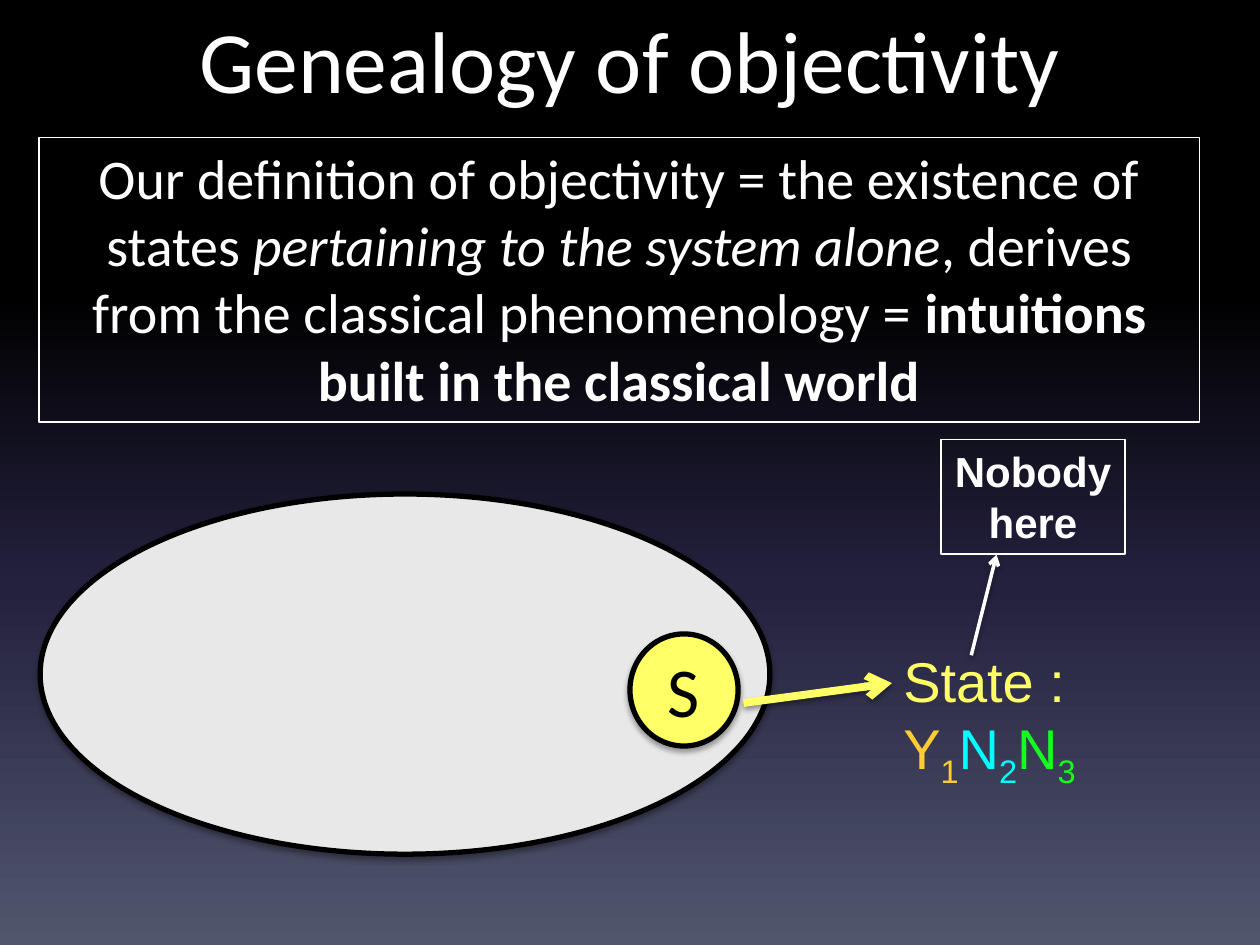
"""Build the "Genealogy of objectivity" slide."""
from lxml import etree
from pptx import Presentation
from pptx.dml.color import RGBColor
from pptx.enum.shapes import MSO_CONNECTOR, MSO_SHAPE
from pptx.enum.text import MSO_ANCHOR, PP_ALIGN
from pptx.oxml import parse_xml
from pptx.oxml.ns import nsdecls, qn
from pptx.util import Cm, Pt

CENTER, LEFT = PP_ALIGN.CENTER, PP_ALIGN.LEFT
TOP, MIDDLE = MSO_ANCHOR.TOP, MSO_ANCHOR.MIDDLE
OVAL, STRAIGHT = MSO_SHAPE.OVAL, MSO_CONNECTOR.STRAIGHT
COLORS = {
    "black": "000000", "white": "FFFFFF", "grey": "E8E8E8", "yellow": "FFFF66",
    "orange": "FFCD32", "cyan": "00FFFF", "green": "15FF1F",
    "night": "24213E", "dusk": "51566D",
}


def rgb(name):
    return RGBColor.from_string(COLORS[name])


def add_shadow(shape, opacity, distance):
    shape.element.spPr.append(parse_xml(
        f'<a:effectLst {nsdecls("a")}><a:outerShdw blurRad="{Pt(3.1)}" dist="{Pt(distance)}" '
        f'dir="5400000" rotWithShape="0"><a:srgbClr val="{COLORS["black"]}">'
        f'<a:alpha val="{opacity * 1000}"/></a:srgbClr></a:outerShdw></a:effectLst>'))


prs = Presentation()
prs.slide_width, prs.slide_height = Cm(25.4), Cm(19.05)
s = prs.slides.add_slide(prs.slide_layouts[5])

fill = s.background.fill
fill.gradient()
fill.gradient_angle = 270
stops = s.element.find(".//" + qn("a:gsLst"))
for stop in list(stops):
    stops.remove(stop)
for position, name in [(0, "black"), (31, "black"), (62, "night"), (100, "dusk")]:
    stop = etree.SubElement(stops, qn("a:gs"), pos=str(position * 1000))
    etree.SubElement(stop, qn("a:srgbClr"), val=COLORS[name])

title = s.shapes.title
title.left, title.top, title.width, title.height = Cm(1.27), Cm(0), Cm(22.86), Cm(3.18)

definition = s.shapes.add_textbox(Cm(0.79), Cm(2.77), Cm(23.39), Cm(5.74))

ovals = []
for x, y, w, h, name in [(0.81, 9.96, 14.71, 7.26, "grey"), (12.7, 12.78, 2.18, 2.26, "yellow")]:
    sp = s.shapes.add_shape(OVAL, Cm(x), Cm(y), Cm(w), Cm(h))
    sp.fill.solid()
    sp.fill.fore_color.rgb = rgb(name)
    sp.line.color.rgb = rgb("black")
    sp.line.width = Pt(3)
    add_shadow(sp, 35, 1.8)
    ovals.append(sp)
world, system = ovals

state = s.shapes.add_textbox(Cm(17.96), Cm(12.9), Cm(4.19), Cm(3))
nobody = s.shapes.add_textbox(Cm(18.97), Cm(8.86), Cm(3.71), Cm(2.31))

for box in (definition, nobody):
    box.line.color.rgb = rgb("white")
    box.line.width = Pt(0.75)

texts = [
    (title, "Calibri", 50, CENTER, TOP, True, [[("Genealogy of objectivity", "white", "")]]),
    (definition, "Calibri", 32, CENTER, TOP, True, [[
        ("Our definition of objectivity = the existence of states ", "white", ""),
        ("pertaining to the system alone", "white", "italic"),
        (", derives from the classical phenomenology = ", "white", ""),
        ("intuitions built in the classical world", "white", "bold")]]),
    (system, "Calibri", 40, CENTER, MIDDLE, True, [[("S", "black", "")]]),
    (state, "Arial", 32, LEFT, TOP, False, [
        [("State :", "yellow", "")],
        [("Y", "orange", ""), ("1", "orange", "sub"), ("N", "cyan", ""),
         ("2", "cyan", "sub"), ("N", "green", ""), ("3", "green", "sub")]]),
    (nobody, "Arial", 24, CENTER, TOP, False, [
        [("Nobody", "white", "bold")], [("here", "white", "bold")]]),
]
for sp, font, size, align, anchor, wrap, paragraphs in texts:
    tf = sp.text_frame
    tf.word_wrap = wrap
    tf.vertical_anchor = anchor
    for i, runs in enumerate(paragraphs):
        p = tf.add_paragraph() if i else tf.paragraphs[0]
        p.alignment = align
        for text, color, style in runs:
            r = p.add_run()
            r.text = text
            r.font.name = font
            r.font.size = Pt(size)
            r.font.color.rgb = rgb(color)
            r.font.bold = style == "bold"
            r.font.italic = style == "italic"
            if style == "sub":
                r.font._element.set("baseline", "-25000")

for x1, y1, x2, y2, color, width in [
    (14.99, 14.17, 17.98, 13.77, "yellow", 4.5),
    (19.58, 13.21, 20.09, 11.18, "white", 2),
]:
    arrow = s.shapes.add_connector(STRAIGHT, Cm(x1), Cm(y1), Cm(x2), Cm(y2))
    arrow.line.color.rgb = rgb(color)
    arrow.line.width = Pt(width)
    etree.SubElement(arrow.element.spPr.find(qn("a:ln")), qn("a:tailEnd"), type="arrow")
    add_shadow(arrow, 38, 1.6)

prs.save("out.pptx")
